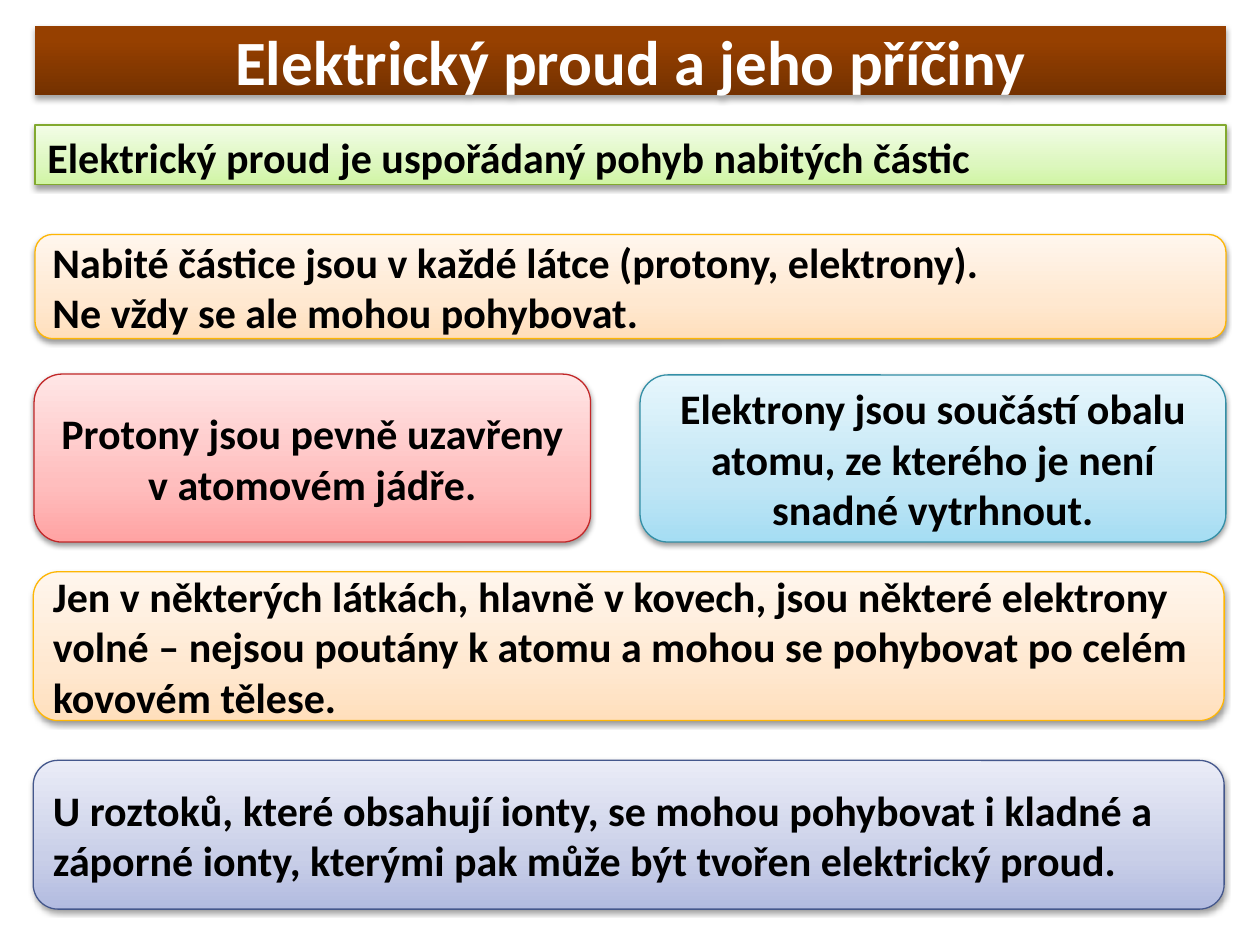
"""Build a slide on electric current and its causes."""
from lxml import etree
from pptx import Presentation
from pptx.dml.color import RGBColor
from pptx.enum.shapes import MSO_SHAPE
from pptx.enum.text import MSO_ANCHOR, MSO_AUTO_SIZE, PP_ALIGN
from pptx.oxml.ns import qn
from pptx.util import Pt

RECTANGLE, ROUNDED = MSO_SHAPE.RECTANGLE, MSO_SHAPE.ROUNDED_RECTANGLE
TOP, MIDDLE = MSO_ANCHOR.TOP, MSO_ANCHOR.MIDDLE
LEFT, CENTER = PP_ALIGN.LEFT, PP_ALIGN.CENTER
NO_AUTOFIT = MSO_AUTO_SIZE.NONE

BROWN = ("743100", "964000", "974100")
GREEN = ("D0F5A3", "DDF7BF", "F2FDE6")
ORANGE = ("FFDFBC", "FFE8D0", "FFF6ED")
RED = ("FFA3A3", "FFBEBE", "FFE6E6")
CYAN = ("A5DDF3", "C1E6F5", "E6F6FC")
BLUE = ("B2BBE0", "C9CFE8", "EAECF7")


def color(value):
    return RGBColor.from_string(value)


def add_element(parent, tag, **attributes):
    return etree.SubElement(parent, qn(tag), attributes)


class SlideBuilder:
    font = "Calibri"
    size = 24

    def __init__(self, slide):
        self.slide = slide

    def place(self, shape, box):
        shape.left, shape.top, shape.width, shape.height = map(Pt, box)

    def gradient(self, shape, colors, middle):
        shape.fill.gradient()
        shape.fill.gradient_angle = 90
        stops = shape._element.spPr.find(".//" + qn("a:gsLst"))
        for stop in list(stops):
            stops.remove(stop)
        for percent, value in zip((0, middle, 100), colors):
            stop = add_element(stops, "a:gs", pos=str(percent * 1000))
            add_element(stop, "a:srgbClr", val=value)

    def shadow(self, shape, distance, opacity):
        shape.shadow.inherit = False
        effects = shape._element.spPr.find(qn("a:effectLst"))
        outer = add_element(effects, "a:outerShdw", blurRad=str(Pt(3.1)), dist=str(Pt(distance)),
                            dir="5400000", rotWithShape="0")
        black = add_element(outer, "a:srgbClr", val="000000")
        add_element(black, "a:alpha", val=str(opacity * 1000))

    def set_text(self, shape, text, size, text_color, align, anchor):
        frame = shape.text_frame
        frame.text = text
        frame.word_wrap = True
        frame.auto_size = NO_AUTOFIT
        frame.vertical_anchor = anchor
        for paragraph in frame.paragraphs:
            paragraph.alignment = align
            for run in paragraph.runs:
                run.font.name = self.font
                run.font.size = Pt(size)
                run.font.bold = True
                run.font.color.rgb = color(text_color)

    def title(self, text, box):
        shape = self.slide.shapes.title
        self.place(shape, box)
        self.gradient(shape, BROWN, 80)
        self.shadow(shape, 1.8, 35)
        self.set_text(shape, text, 36, "FFFFFF", CENTER, MIDDLE)

    def panel(self, text, box, fill, line, kind=ROUNDED, align=LEFT, anchor=MIDDLE):
        shape = self.slide.shapes.add_shape(kind, *map(Pt, box))
        self.gradient(shape, fill, 35)
        shape.line.color.rgb = color(line)
        shape.line.width = Pt(0.75)
        self.shadow(shape, 1.6, 38)
        self.set_text(shape, text, self.size, "000000", align, anchor)


def main():
    presentation = Presentation()
    presentation.slide_width, presentation.slide_height = Pt(720), Pt(540)
    builder = SlideBuilder(presentation.slides.add_slide(presentation.slide_layouts[5]))
    left, width = 20, 680.5
    builder.title("Elektrický proud a jeho příčiny", (left, 15, width, 39.5))
    builder.panel("Elektrický proud je uspořádaný pohyb nabitých částic",
                  (left, 71.5, width, 34), GREEN, "82A92F", RECTANGLE, anchor=TOP)
    builder.panel("Nabité částice jsou v každé látce (protony, elektrony).\n"
                  "Ne vždy se ale mohou pohybovat.",
                  (left, 134, width, 59.5), ORANGE, "FEB604")
    builder.panel("Protony jsou pevně uzavřeny v atomovém jádře.",
                  (19.5, 213.75, 318, 96), RED, "C22829", align=CENTER)
    builder.panel("Elektrony jsou součástí obalu atomu, ze kterého je není snadné vytrhnout.",
                  (365.75, 214.25, 334.75, 95.5), CYAN, "348FA6", align=CENTER)
    builder.panel("Jen v některých látkách, hlavně v kovech, jsou některé elektrony volné – "
                  "nejsou poutány k atomu a mohou se pohybovat po celém kovovém tělese.",
                  (19, 326.75, width, 85), ORANGE, "FEB604")
    builder.panel("U roztoků, které obsahují ionty, se mohou pohybovat i kladné a záporné ionty, "
                  "kterými pak může být tvořen elektrický proud.",
                  (19, 434.5, width, 85), BLUE, "44578C")
    presentation.save("out.pptx")


if __name__ == "__main__":
    main()
